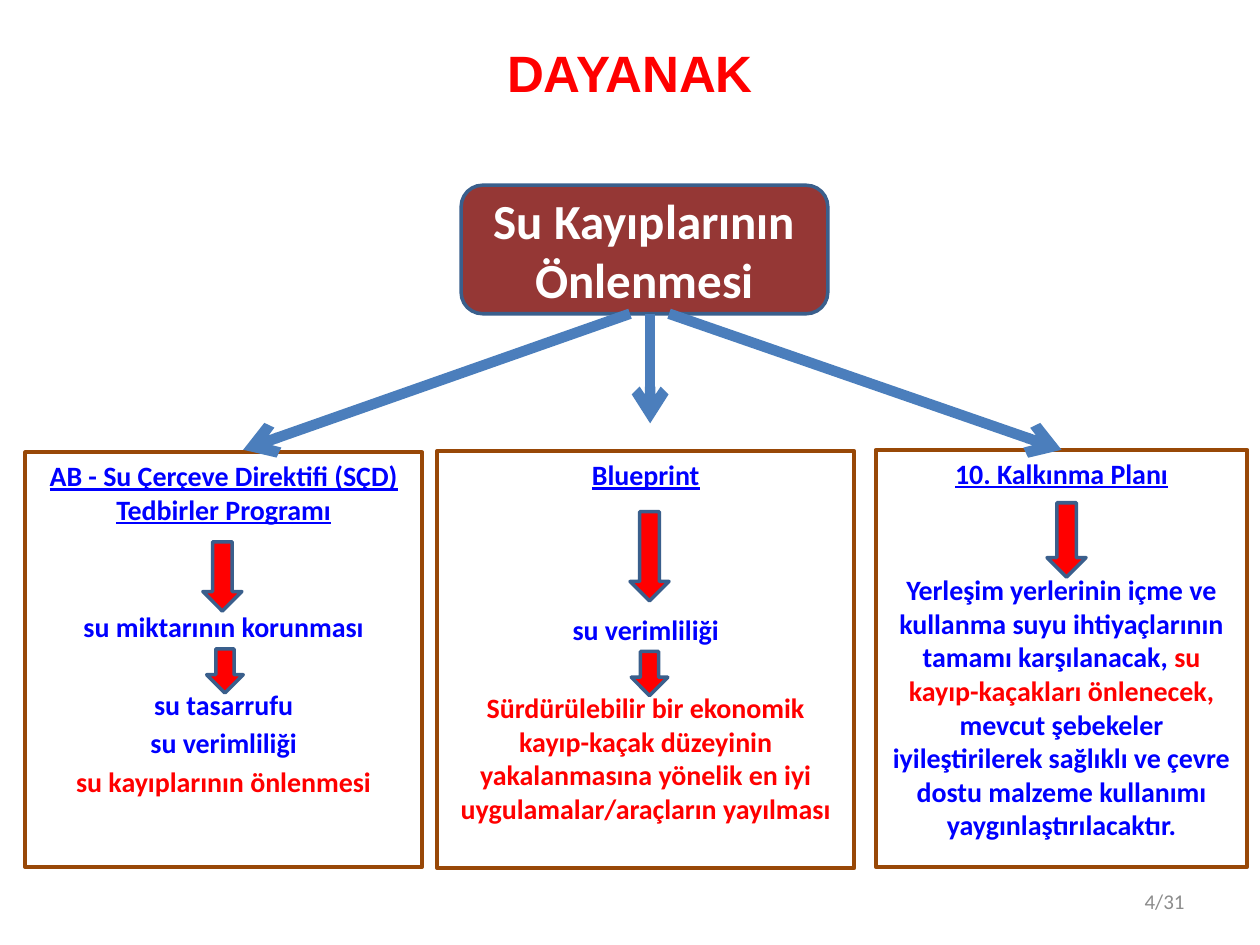
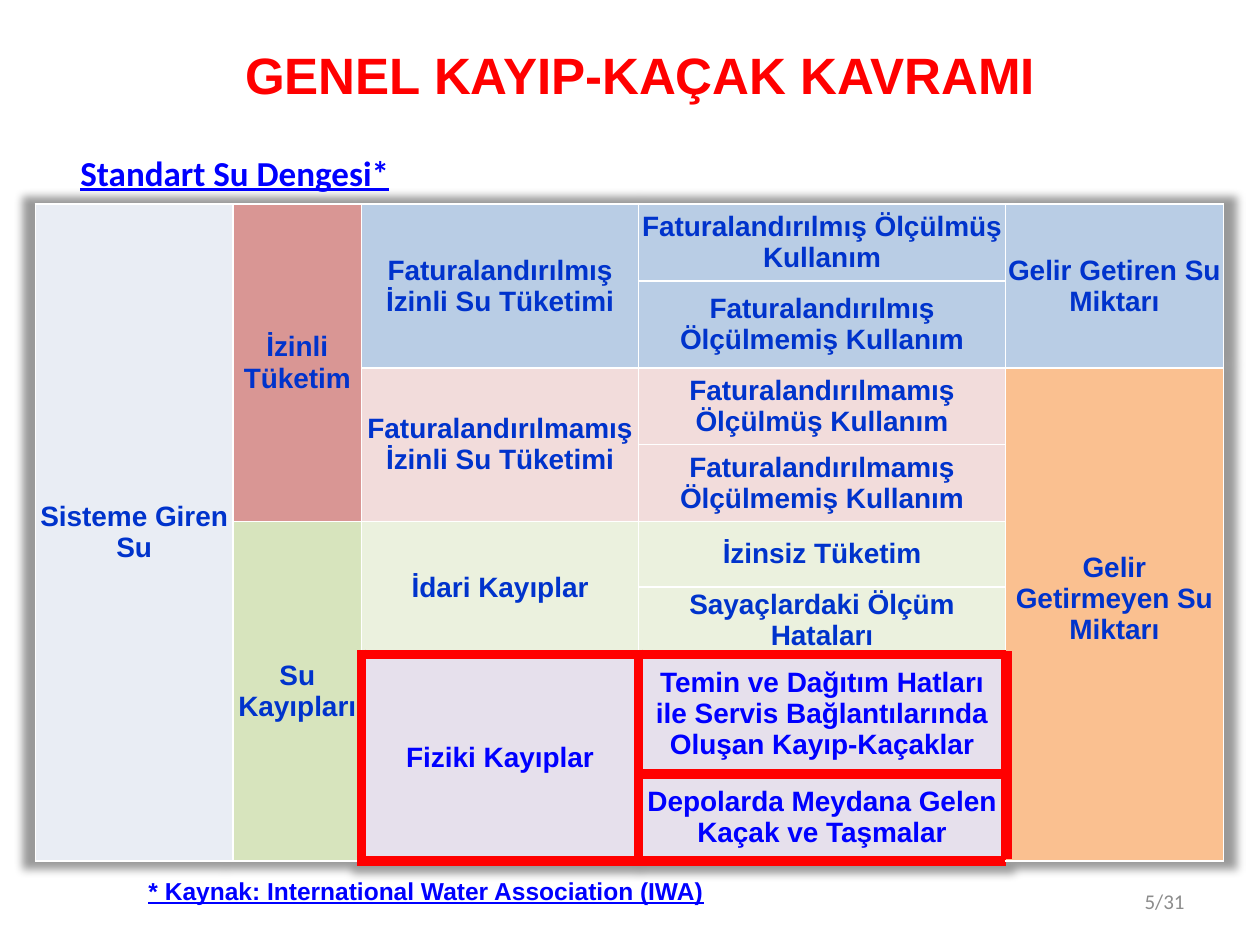
from lxml.etree import SubElement
from pptx import Presentation
from pptx.dml.color import RGBColor
from pptx.enum.shapes import MSO_CONNECTOR, MSO_SHAPE
from pptx.enum.text import MSO_ANCHOR, PP_ALIGN
from pptx.oxml import parse_xml
from pptx.oxml.ns import nsdecls, qn
from pptx.util import Inches, Pt

RED, BLUE, WHITE = "FF0000", "0000FF", "FFFFFF"
BROWN, OUTLINE, ARROW = "984807", "3A5F8C", "4B7EBC"
CENTER, LEFT, RIGHT = PP_ALIGN.CENTER, PP_ALIGN.LEFT, PP_ALIGN.RIGHT
TOP, MIDDLE = MSO_ANCHOR.TOP, MSO_ANCHOR.MIDDLE

TITLE = {"name": "Arial", "size": 29.2, "bold": True, "color": RED}
PAGE = {"name": "Calibri", "size": 12, "color": "8C8C8C"}
BODY = {"name": "Calibri", "size": 16, "bold": True, "color": BLUE}
HEADING = {**BODY, "underline": True}
ALERT = {**BODY, "color": RED}
ROOT = {**BODY, "size": 28, "color": WHITE}
NOTE = {"name": "Arial", "size": 14, "bold": True, "underline": True, "color": BLUE}
CELL = {"name": "Arial", "size": 16, "bold": True, "color": "0033CC"}

TABLE_SHADOW = (
    f'<a:effectLst {nsdecls("a")}><a:outerShdw blurRad="63500" sx="102000" sy="102000" '
    'algn="ctr" rotWithShape="0"><a:prstClr val="black"><a:alpha val="40000"/>'
    "</a:prstClr></a:outerShdw></a:effectLst>"
)


def rgb(color):
    return RGBColor.from_string(color)


def set_font(font, style):
    for key, value in style.items():
        if key == "color":
            font.color.rgb = rgb(value)
        else:
            setattr(font, key, Pt(value) if key == "size" else value)


def set_border(cell, side, color, width):
    """Draw one side (L, R, T or B) of a table cell."""
    tc_pr = cell._tc.get_or_add_tcPr()
    ln = SubElement(tc_pr, qn(f"a:ln{side}"), w=str(Pt(width)))
    fill = SubElement(ln, qn("a:solidFill"))
    SubElement(fill, qn("a:srgbClr"), val=color)


class Deck:
    """Holds the presentation, its shared style and the current slide."""

    def __init__(self):
        self.prs = Presentation()
        self.prs.slide_width, self.prs.slide_height = Inches(10), Inches(7.5)
        self.s = None

    def slide(self, title, title_box, page):
        self.s = self.prs.slides.add_slide(self.prs.slide_layouts[6])
        self.text(title_box, title, TITLE, CENTER, MIDDLE)
        self.text((7.17, 6.95, 2.33, 0.4), page, PAGE, RIGHT, MIDDLE)

    def fill_frame(self, tf, paragraphs, align, anchor):
        """Fill a text frame from (space before, [(text, style), ...]) pairs."""
        tf.word_wrap, tf.vertical_anchor = True, anchor
        for i, (space, runs) in enumerate(paragraphs):
            p = tf.add_paragraph() if i else tf.paragraphs[0]
            p.alignment = align
            if space:
                p.space_before = Pt(space)
            for text, style in runs:
                for k, line in enumerate(text.split("\n")):
                    if k:
                        p.add_line_break()
                    r = p.add_run()
                    r.text = line
                    set_font(r.font, style)

    def text(self, box, text, style, align=LEFT, anchor=TOP):
        sp = self.s.shapes.add_textbox(*map(Inches, box))
        self.fill_frame(sp.text_frame, [(0, [(text, style)])], align, anchor)
        return sp

    def shape(self, kind, box, fill, line, width, paragraphs=(), anchor=TOP):
        sp = self.s.shapes.add_shape(kind, *map(Inches, box))
        sp.shadow.inherit = False
        if fill:
            sp.fill.solid()
            sp.fill.fore_color.rgb = rgb(fill)
        else:
            sp.fill.background()
        sp.line.color.rgb, sp.line.width = rgb(line), Pt(width)
        self.fill_frame(sp.text_frame, paragraphs, CENTER, anchor)
        return sp

    def line(self, start, end, color, arrow=False):
        cn = self.s.shapes.add_connector(MSO_CONNECTOR.STRAIGHT, *map(Inches, start + end))
        cn.line.color.rgb, cn.line.width = rgb(color), Pt(6)
        if arrow:
            SubElement(cn._element.spPr.find(qn("a:ln")), qn("a:tailEnd"), type="arrow")
        SubElement(cn._element.spPr, qn("a:effectLst"))
        return cn

    def table(self, box, widths, heights):
        frame = self.s.shapes.add_table(len(heights), len(widths), *map(Inches, box))
        table = frame.table
        table.first_row = table.horz_banding = False
        table._tbl.tblPr.insert(0, parse_xml(TABLE_SHADOW))
        for column, width in zip(table.columns, widths):
            column.width = Inches(width)
        for row, height in zip(table.rows, heights):
            row.height = Inches(height)
        return table

    def cell(self, table, row, col, span, text, style, fill, red_sides="", bottom=0):
        """Fill a cell that covers span rows, with thick red lines on red_sides."""
        cell = table.cell(row, col)
        if span > 1:
            cell.merge(table.cell(row + span - 1, col))
        for k in range(row, row + span):
            part = table.cell(k, col)
            for side in "LRTB":
                red = side in red_sides
                set_border(part, side, RED if red else WHITE, 6 if red else 1)
            part.fill.solid()
            part.fill.fore_color.rgb = rgb(fill)
        cell.margin_left = cell.margin_right = Inches(0.02)
        cell.margin_top, cell.margin_bottom = 0, Inches(bottom)
        self.fill_frame(cell.text_frame, [(0, [(text, style)])], CENTER, MIDDLE)
        cell.vertical_anchor = MIDDLE


def build_basis(deck):
    deck.slide("DAYANAK", (1.14, 0, 7.72, 1.14), "4/31")
    columns = [
        ((0.2, 3.59, 3.15, 3.29), [
            (0, [("AB - Su Çerçeve Direktifi (SÇD)\nTedbirler Programı", HEADING)]),
            (48, [("su miktarının korunması", BODY)]),
            (25, [("su tasarrufu", BODY)]),
            (3, [("su verimliliği", BODY)]),
            (3, [("su kayıplarının önlenmesi", ALERT)]),
        ]),
        ((3.47, 3.58, 3.31, 3.31), [
            (0, [("Blueprint", HEADING)]),
            (69.5, [("su verimliliği", BODY)]),
            (25.5, [("Sürdürülebilir bir ekonomik kayıp-kaçak düzeyinin yakalanmasına "
                     "yönelik en iyi uygulamalar/araçların yayılması", ALERT)]),
        ]),
        ((6.95, 3.57, 2.95, 3.31), [
            (0, [("10. Kalkınma Planı", HEADING)]),
            (47.5, [("Yerleşim yerlerinin içme ve kullanma suyu ihtiyaçlarının tamamı "
                     "karşılanacak, ", BODY),
                    ("su kayıp-kaçakları önlenecek, ", ALERT),
                    ("mevcut şebekeler iyileştirilerek sağlıklı ve çevre dostu malzeme "
                     "kullanımı yaygınlaştırılacaktır.", BODY)]),
        ]),
    ]
    boxes = [deck.shape(MSO_SHAPE.RECTANGLE, box, None, BROWN, 2.25, paragraphs)
             for box, paragraphs in columns]
    deck.shape(MSO_SHAPE.ROUNDED_RECTANGLE, (3.66, 1.47, 2.91, 1.02), "953735", OUTLINE, 2,
               [(0, [("Su Kayıplarının Önlenmesi", ROOT)])], MIDDLE)

    down_arrows = [
        (1.61, 4.3, 0.31, 0.55), (1.64, 5.15, 0.29, 0.35), (5, 4.06, 0.31, 0.71),
        (5.01, 5.17, 0.29, 0.35), (8.31, 3.99, 0.31, 0.59),
    ]
    for box in down_arrows:
        deck.shape(MSO_SHAPE.DOWN_ARROW, box, RED, OUTLINE, 2)

    deck.line((5, 2.49), (1.93, 3.57), ARROW, arrow=True)
    to_plan = deck.line((5.31, 2.49), (8.43, 3.57), ARROW, arrow=True)
    to_plan.end_connect(boxes[2], 0)
    deck.line((5.16, 2.49), (5.16, 3.36), ARROW, arrow=True)


def build_water_balance(deck):
    deck.slide("GENEL KAYIP-KAÇAK KAVRAMI", (1.22, 0, 7.72, 1.18), "5/31")
    table = deck.table((0.28, 1.62, 9.45, 5.21), [1.57, 1.02, 2.2, 2.91, 1.73],
                       [0.61, 0.69, 0.61, 0.61, 0.52, 0.52, 0.95, 0.69])
    billed, unbilled, admin, physical = "B9CDE5", "F2DCDB", "EBF1DE", "E6E0EC"
    # Each column lists its cells from the top: text, rows covered, fill
    balance = [
        [("Sisteme Giren Su", 8, "E9EDF4")],
        [("İzinli Tüketim", 4, "D99694"), ("Su Kayıpları", 4, "D7E4BD")],
        [("Faturalandırılmış İzinli Su Tüketimi", 2, billed),
         ("Faturalandırılmamış İzinli Su Tüketimi", 2, unbilled),
         ("İdari Kayıplar", 2, admin),
         ("Fiziki Kayıplar", 2, physical)],
        [("Faturalandırılmış Ölçülmüş Kullanım", 1, billed),
         ("Faturalandırılmış Ölçülmemiş Kullanım", 1, billed),
         ("Faturalandırılmamış Ölçülmüş Kullanım", 1, unbilled),
         ("Faturalandırılmamış Ölçülmemiş Kullanım", 1, unbilled),
         ("İzinsiz Tüketim", 1, admin),
         ("Sayaçlardaki Ölçüm Hataları", 1, admin),
         ("Temin ve Dağıtım Hatları ile Servis Bağlantılarında Oluşan Kayıp-Kaçaklar",
          1, physical),
         ("Depolarda Meydana Gelen Kaçak ve Taşmalar", 1, physical)],
        [("Gelir Getiren Su Miktarı", 2, billed),
         ("Gelir Getirmeyen Su Miktarı", 6, "FAC090")],
    ]
    physical_row = 6
    for col, cells in enumerate(balance):
        row = 0
        for text, span, fill in cells:
            style, red_sides = CELL, ""
            if fill == physical:
                style = {**CELL, "color": BLUE}
                red_sides = "LTBR" if col == 2 else "LTB"
            elif fill == admin and row + span == physical_row:
                red_sides = "B"
            bottom = 0.25 if span == 6 else 0
            deck.cell(table, row, col, span, text, style, fill, red_sides, bottom)
            row += span

    deck.text((0.54, 1.15, 9, 0.47), "Standart Su Dengesi*", {**HEADING, "size": 20})
    source = deck.text((1.08, 6.9, 4.68, 0.34),
                       "* Kaynak: International Water Association (IWA)", NOTE)
    source.text_frame.word_wrap = False
    deck.line((7.99, 5.17), (7.99, 6.82), RED)


def main():
    deck = Deck()
    build_basis(deck)
    build_water_balance(deck)
    deck.prs.save("out.pptx")


if __name__ == "__main__":
    main()
